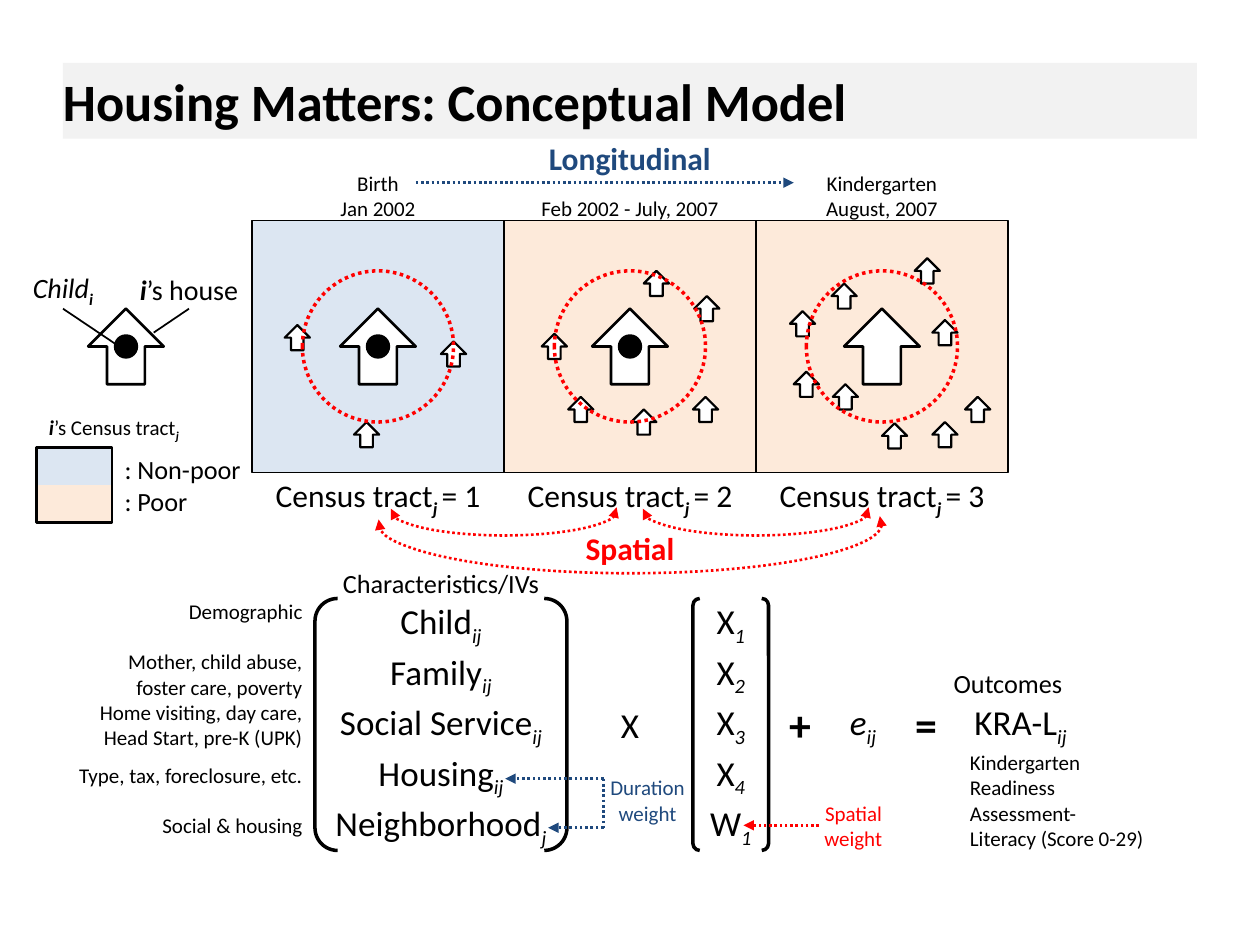
from dataclasses import dataclass

from lxml import etree
from pptx import Presentation
from pptx import util as u
from pptx.dml.color import RGBColor
from pptx.enum import dml, shapes, text
from pptx.oxml.ns import qn

GRID = 2.54  # cm in one layout unit
BLACK, WHITE, RED, NAVY = "000000", "FFFFFF", "FF0000", "1F497D"
NON_POOR, POOR, TITLE_GREY = "DCE6F2", "FDEADA", "F2F2F2"
G, AL, AN = shapes.MSO_SHAPE, text.PP_ALIGN, text.MSO_ANCHOR
HOUSE_Y, HOUSE_SIZE, SMALL_HOUSE, DOT = 2.75, 0.6, 0.2, 0.18


@dataclass
class Label:
    """Lines hold (text, flags) runs; flags are b(old), i(talic), s(ubscript)."""
    box: tuple
    lines: list
    size: float = 12
    color: str = BLACK
    align: AL = AL.CENTER
    anchor: AN = AN.MIDDLE
    pad: tuple = (0.1, 0.1)
    fill: str = None


@dataclass
class Tract:
    number: int
    fill: str
    dates: list
    small_houses: list
    child_home: bool = True

    @property
    def left(self) -> float:
        return 2 * self.number


TRACTS = [
    Tract(1, NON_POOR, ["Birth", "Jan 2002"],
          [(3.5, 2.71), (2.26, 2.58), (2.81, 3.35)]),
    Tract(2, POOR, ["Feb 2002 - July, 2007"],
          [(5.11, 2.15), (4.3, 2.65), (5.5, 3.15), (4.51, 3.15), (5.01, 3.25), (5.51, 2.35)]),
    Tract(3, POOR, ["Kindergarten", "August, 2007"],
          [(6.27, 2.47), (6.3, 2.95), (7, 3.36), (7.66, 3.15), (6.61, 3.05), (6.6, 2.25),
           (7.4, 3.35), (7.26, 2.05), (7.4, 2.54)], child_home=False),
]
# Each model row: name, subscript, weight, weight subscript, note, note anchor
ROWS = [
    ("Child", "ij", "X", "1", "Demographic", AN.TOP),
    ("Family", "ij", "X", "2", "Mother, child abuse, foster care, poverty", AN.MIDDLE),
    ("Social Service", "ij", "X", "3", "Home visiting, day care, Head Start, pre-K (UPK)", AN.MIDDLE),
    ("Housing", "ij", "X", "4", "Type, tax, foreclosure, etc.", AN.MIDDLE),
    ("Neighborhood", "j", "W", "1", "Social & housing", AN.MIDDLE),
]


def cm(*units: float) -> list:
    return [u.Cm(n * GRID) for n in units]


def rgb(value: str) -> RGBColor:
    return RGBColor.from_string(value)


def plain(*lines: str) -> list:
    return [[(line, "")] for line in lines]


def set_line(s, color: str, width: float, dotted=False, heads=()) -> None:
    s.line.color.rgb = rgb(color)
    s.line.width = u.Pt(width)
    if dotted:
        s.line.dash_style = dml.MSO_LINE.ROUND_DOT
    ln = s.line._get_or_add_ln()
    for head in heads:
        etree.SubElement(ln, qn(f"a:{head}")).set("type", "triangle")


def add_shape(s_tree, kind: G, box: tuple, fill=None, color=None, width=1.0,
              dotted=False, heads=(), adjust=()):
    s = s_tree.add_shape(kind, *cm(*box))
    s.shadow.inherit = False
    if fill:
        s.fill.solid()
        s.fill.fore_color.rgb = rgb(fill)
    else:
        s.fill.background()
    for i, value in enumerate(adjust):
        s.adjustments[i] = value
    if color:
        set_line(s, color, width, dotted, heads)
    else:
        s.line.fill.background()
    return s


def add_line(s_tree, start: tuple, end: tuple, color=BLACK, width=1.0,
             dotted=False, arrow=False) -> None:
    s = s_tree.add_connector(shapes.MSO_CONNECTOR.STRAIGHT, *cm(*start, *end))
    set_line(s, color, width, dotted, ["tailEnd"] if arrow else [])
    etree.SubElement(s._element.spPr, qn("a:effectLst"))


def add_label(s_tree, label: Label) -> None:
    if label.fill:
        s = add_shape(s_tree, G.RECTANGLE, label.box, label.fill)
    else:
        s = s_tree.add_textbox(*cm(*label.box))
    tf = s.text_frame
    left, right = cm(*label.pad)
    frame = {"word_wrap": True, "auto_size": text.MSO_AUTO_SIZE.NONE,
             "vertical_anchor": label.anchor, "margin_left": left,
             "margin_right": right, "margin_top": 0, "margin_bottom": 0}
    for name, value in frame.items():
        setattr(tf, name, value)
    for i, line in enumerate(label.lines):
        p = tf.add_paragraph() if i else tf.paragraphs[0]
        p.alignment = label.align
        for content, flags in line:
            r = p.add_run()
            r.text = content
            font = {"name": "Calibri", "size": u.Pt(label.size),
                    "bold": "b" in flags, "italic": "i" in flags}
            for name, value in font.items():
                setattr(r.font, name, value)
            r.font.color.rgb = rgb(label.color)
            if "s" in flags:
                r._r.get_or_add_rPr().set("baseline", "-25000")


def add_centered(s_tree, kind: G, x: float, size: float, **style) -> None:
    """Place a square shape on the line through the large houses."""
    add_shape(s_tree, kind, (x - size / 2, HOUSE_Y - size / 2, size, size), **style)


def add_house(s_tree, x: float, with_child: bool) -> None:
    add_centered(s_tree, G.UP_ARROW, x, HOUSE_SIZE, fill=WHITE, color=BLACK, width=1.5)
    if with_child:
        add_centered(s_tree, G.OVAL, x, DOT, fill=BLACK, color=BLACK)


def add_tract(s_tree, tract: Tract) -> None:
    left = tract.left
    add_shape(s_tree, G.RECTANGLE, (left, 1.75, 2, 2), tract.fill, BLACK)
    for x, y in tract.small_houses:
        add_shape(s_tree, G.UP_ARROW, (x, y, SMALL_HOUSE, SMALL_HOUSE), WHITE, BLACK, 1.25)
    add_house(s_tree, left + 1, tract.child_home)
    add_centered(s_tree, G.OVAL, left + 1, 1.2, color=RED, width=2, dotted=True)
    add_label(s_tree, Label((left, 1.35, 2, 0.4), plain(*tract.dates), anchor=AN.BOTTOM))
    name = [("Census tract", ""), ("j ", "bis"), (f"= {tract.number}", "")]
    add_label(s_tree, Label((left, 3.75, 2, 0.4), [name], 18))


def add_model(s_tree) -> None:
    for i, (name, sub, weight, weight_sub, note, anchor) in enumerate(ROWS):
        y = 4.75 + 0.4 * i
        add_label(s_tree, Label((2.5, y, 2, 0.4), [[(name, ""), (sub, "is")]], 20, fill=WHITE))
        add_label(s_tree, Label((5.5, y, 0.6, 0.4), [[(weight, ""), (weight_sub, "is")]], 20, fill=WHITE))
        add_label(s_tree, Label((0.5, y, 2, 0.4), plain(note), align=AL.RIGHT, anchor=anchor, fill=WHITE))
    terms = [(4.5, 1, 20, [("X", "")]), (6.1, 0.5, 25, [("+", "b")]),
             (6.6, 0.5, 20, [("e", "i"), ("ij", "is")]), (7.1, 0.5, 25, [("=", "b")]),
             (7.6, 1, 20, [("KRA-L", ""), ("ij", "is")])]
    for x, width, size, runs in terms:
        add_label(s_tree, Label((x, 5.55, width, 0.4), [runs], size, fill=WHITE))
    for x, width in ((2.5, 2), (5.5, 0.6)):
        add_shape(s_tree, G.DOUBLE_BRACKET, (x, 4.75, width, 2), color=BLACK, width=2, adjust=[0.09])


def main() -> None:
    prs = Presentation()
    prs.slide_width, prs.slide_height = cm(10, 7.5)
    s_tree = prs.slides.add_slide(prs.slide_layouts[6]).shapes

    add_model(s_tree)
    for tract in TRACTS:
        add_tract(s_tree, tract)

    add_house(s_tree, 1, True)
    for y, fill in ((3.55, NON_POOR), (3.85, POOR)):
        add_shape(s_tree, G.RECTANGLE, (0.29, y, 0.6, 0.3), fill)
    add_shape(s_tree, G.RECTANGLE, (0.29, 3.55, 0.6, 0.6), color=BLACK, width=1.5)

    flush = (0, 0)
    labels = [
        Label((0.5, 0.5, 9, 0.6), [[("Housing Matters: Conceptual Model", "b")]], 30,
              align=AL.LEFT, pad=flush, fill=TITLE_GREY),
        Label((4, 1.05, 2, 0.4), [[("Longitudinal", "b")]], 18, NAVY),
        Label((4, 4.15, 2, 0.4), [[("Spatial", "b")]], 18, RED),
        Label((0, 2.15, 1, 0.3), [[("Child", "i"), ("i", "bis")]], 16, pad=flush),
        Label((1, 2.15, 1, 0.3), [[("i", "bi"), ("’s house", "")]], 16, pad=flush),
        Label((0.29, 3.25, 1.71, 0.3), [[("i", "bi"), ("’s Census tract", ""), ("j", "bis")]], align=AL.LEFT),
        Label((0.89, 3.55, 1.11, 0.6), plain(": Non-poor", ": Poor"), 15, align=AL.LEFT, pad=(0.1, 0)),
        Label((2.5, 4.35, 2, 0.4), plain("Characteristics/IVs"), 15, anchor=AN.BOTTOM, pad=flush),
        Label((7, 5.15, 2, 0.4), plain("Outcomes"), 15, anchor=AN.BOTTOM, pad=flush),
        Label((4.79, 5.95, 0.7, 0.8), plain("Duration", "weight"), color=NAVY, pad=flush),
        Label((6.1, 6.35, 1, 0.4), plain("Spatial", "weight"), color=RED, align=AL.RIGHT),
        Label((7.6, 5.95, 2, 0.8), plain("Kindergarten", "Readiness", "Assessment-", "Literacy (Score 0-29)"),
              align=AL.LEFT),
    ]
    for label in labels:
        add_label(s_tree, label)

    add_line(s_tree, (0.5, 2.45), (1.05, 2.82))
    add_line(s_tree, (1.5, 2.45), (1.22, 2.64))
    dotted_lines = [((3.3, 1.45), (6.3, 1.45), NAVY, True), ((4.79, 6.18), (4.01, 6.18), NAVY, True),
                    ((4.79, 6.57), (4.35, 6.57), NAVY, True), ((4.79, 6.18), (4.79, 6.57), NAVY, False),
                    ((6.5, 6.55), (5.9, 6.55), RED, True)]
    for start, end, color, arrow in dotted_lines:
        add_line(s_tree, start, end, color, 1.5, True, arrow)
    for box in ((3.8, 3.15, 0.4, 1.8), (5.8, 3.15, 0.4, 1.8), (4.6, 2.15, 0.8, 4)):
        arc = add_shape(s_tree, G.ARC, box, color=RED, width=1.5, dotted=True,
                        heads=["headEnd", "tailEnd"], adjust=[161.08, 54.46])
        arc.rotation = 90
    prs.save("out.pptx")


if __name__ == "__main__":
    main()
